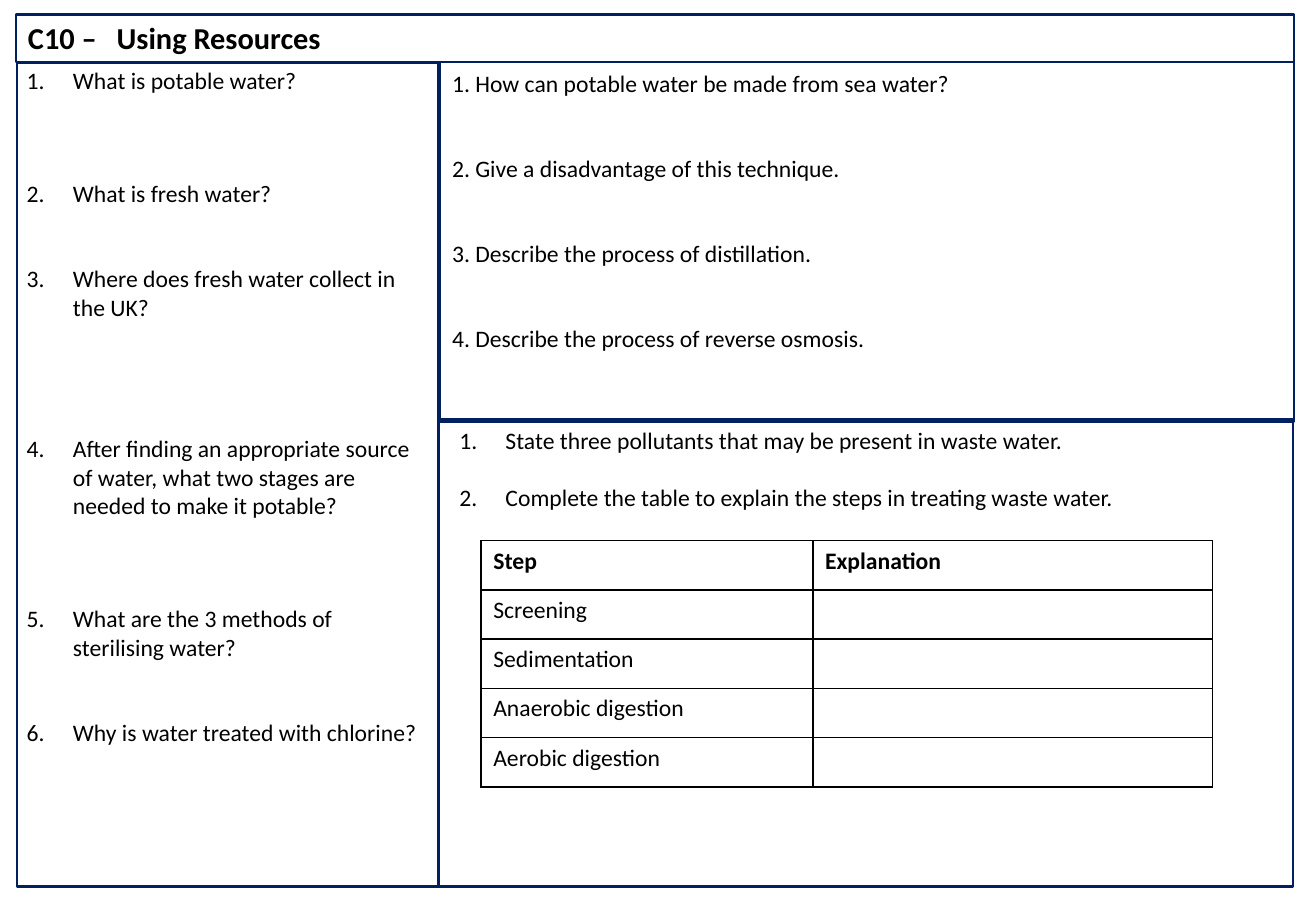
from dataclasses import dataclass

import pptx
import pptx.dml.color
import pptx.enum.shapes
import pptx.enum.text
import pptx.oxml
import pptx.oxml.ns
import pptx.util
from pptx.presentation import Presentation as Deck
from pptx.shapes.base import BaseShape
from pptx.slide import Slide
from pptx.table import Table
from pptx.text.text import _Paragraph as Paragraph

PX_PER_INCH = 100
COMPARISON_LAYOUT = 4


def emu(px: int) -> int:
    return px * pptx.util.Inches(1) // PX_PER_INCH


@dataclass(frozen=True)
class Theme:
    font: str = "Calibri"
    text: str = "000000"
    frame: str = "002060"
    title_size: int = 18
    body_size: int = 14
    line_pitch: float = 16.8
    frame_width: float = 1.5
    grid_width: float = 1


@dataclass(frozen=True)
class Area:
    left: int
    top: int
    width: int
    height: int

    def in_emu(self) -> tuple[int, ...]:
        return tuple(map(emu, (self.left, self.top, self.width, self.height)))


@dataclass(frozen=True)
class Question:
    text: str
    answer_lines: int = 0


@dataclass(frozen=True)
class QuestionList:
    area: Area
    questions: tuple[Question, ...]
    auto_numbered: bool = True


THEME = Theme()
TITLE = "C10 –\tUsing Resources"
TITLE_AREA = Area(13, 11, 671, 40)
TITLE_TAB = 73
HANGING_INDENT = 38

FRAMES = (
    Area(13, 12, 1052, 39),
    Area(14, 52, 347, 678),
    Area(362, 51, 703, 296),
    Area(361, 345, 703, 385),
)

QUESTION_LISTS = (
    QuestionList(Area(12, 49, 348, 599), (
        Question("What is potable water?", 3),
        Question("What is fresh water?", 2),
        Question("Where does fresh water collect in the UK?", 4),
        Question("After finding an appropriate source of water, "
                 "what two stages are needed to make it potable?", 3),
        Question("What are the 3 methods of sterilising water?", 2),
        Question("Why is water treated with chlorine?"),
    )),
    QuestionList(Area(362, 52, 691, 246), (
        Question("1. How can potable water be made from sea water?", 2),
        Question("2. Give a disadvantage of this technique.", 2),
        Question("3. Describe the process of distillation.", 2),
        Question("4. Describe the process of reverse osmosis."),
    ), auto_numbered=False),
    QuestionList(Area(368, 346, 691, 175), (
        Question("State three pollutants that may be present in waste water.", 1),
        Question("Complete the table to explain the steps in treating waste water."),
    )),
)

TABLE_AREA = Area(396, 445, 602, 203)
COLUMN_WIDTHS = (273, 329)
TABLE_HEADINGS = ("Step", "Explanation")
STEPS = ("Screening", "Sedimentation", "Anaerobic digestion", "Aerobic digestion")


def color(value: str) -> pptx.dml.color.RGBColor:
    return pptx.dml.color.RGBColor.from_string(value)


def append_xml(parent, xml: str) -> None:
    tag_end = min(i for i in (xml.find(" "), xml.find(">"), xml.find("/")) if i > 0)
    declared = f"{xml[:tag_end]} {pptx.oxml.ns.nsdecls('a')}{xml[tag_end:]}"
    parent.append(pptx.oxml.parse_xml(declared))


def style(para: Paragraph, size: int, bold: bool = False) -> None:
    para.alignment = pptx.enum.text.PP_ALIGN.LEFT
    para.font.name = THEME.font
    para.font.size = pptx.util.Pt(size)
    para.font.bold = bold
    para.font.color.rgb = color(THEME.text)


def place(box: BaseShape, area: Area) -> None:
    box.left, box.top, box.width, box.height = area.in_emu()
    frame = box.text_frame
    frame.word_wrap = True
    frame.auto_size = pptx.enum.text.MSO_AUTO_SIZE.NONE
    frame.vertical_anchor = pptx.enum.text.MSO_ANCHOR.TOP


def write_title(box: BaseShape) -> None:
    place(box, TITLE_AREA)
    para = box.text_frame.paragraphs[0]
    para.text = TITLE
    append_xml(para._p.get_or_add_pPr(),
               f'<a:tabLst><a:tab pos="{emu(TITLE_TAB)}" algn="l"/></a:tabLst>')
    style(para, THEME.title_size, bold=True)


def set_numbering(para: Paragraph, auto_numbered: bool) -> None:
    properties = para._p.get_or_add_pPr()
    indent = emu(HANGING_INDENT) if auto_numbered else 0
    properties.set("marL", str(indent))
    properties.set("indent", str(-indent))
    if auto_numbered:
        append_xml(properties, f'<a:buFont typeface="{THEME.font}"/>')
        append_xml(properties, '<a:buAutoNum type="arabicPeriod"/>')
    else:
        append_xml(properties, "<a:buNone/>")


def write_questions(box: BaseShape, question_list: QuestionList) -> None:
    place(box, question_list.area)
    frame = box.text_frame
    gap = 0
    for index, question in enumerate(question_list.questions):
        para = frame.add_paragraph() if index else frame.paragraphs[0]
        para.text = question.text
        set_numbering(para, question_list.auto_numbered)
        para.space_before = pptx.util.Pt(gap * THEME.line_pitch)
        para.space_after = pptx.util.Pt(0)
        style(para, THEME.body_size)
        gap = question.answer_lines


def draw_frame(page: Slide, area: Area) -> None:
    frame = page.shapes.add_shape(
        pptx.enum.shapes.MSO_SHAPE.RECTANGLE, *area.in_emu())
    frame.shadow.inherit = False
    frame.fill.background()
    frame.line.color.rgb = color(THEME.frame)
    frame.line.width = pptx.util.Pt(THEME.frame_width)


def fill_cell(table: Table, row: int, column: int, text: str) -> None:
    cell = table.cell(row, column)
    cell.text = text
    style(cell.text_frame.paragraphs[0], THEME.body_size, bold=row == 0)
    properties = cell._tc.get_or_add_tcPr()
    for side in ("lnL", "lnR", "lnT", "lnB"):
        append_xml(properties,
                   f'<a:{side} w="{pptx.util.Pt(THEME.grid_width)}"><a:solidFill>'
                   f'<a:srgbClr val="{THEME.text}"/></a:solidFill></a:{side}>')
    cell.fill.background()


def draw_table(page: Slide) -> None:
    rows = (TABLE_HEADINGS, *((step, "") for step in STEPS))
    table = page.shapes.add_table(
        len(rows), len(COLUMN_WIDTHS), *TABLE_AREA.in_emu()).table
    table.first_row = table.horz_banding = False
    for column, width in zip(table.columns, COLUMN_WIDTHS):
        column.width = emu(width)
    for row_index, texts in enumerate(rows):
        table.rows[row_index].height = emu(TABLE_AREA.height) // len(rows)
        for column_index, text in enumerate(texts):
            fill_cell(table, row_index, column_index, text)


def main() -> None:
    deck: Deck = pptx.Presentation()
    deck.slide_width, deck.slide_height = emu(1083), emu(750)
    page = deck.slides.add_slide(deck.slide_layouts[COMPARISON_LAYOUT])
    title, *bodies = page.placeholders
    write_title(title)
    for body, question_list in zip(bodies, QUESTION_LISTS):
        write_questions(body, question_list)
    for unused in bodies[len(QUESTION_LISTS):]:
        unused.element.getparent().remove(unused.element)
    for area in FRAMES:
        draw_frame(page, area)
    draw_table(page)
    deck.save("out.pptx")


if __name__ == "__main__":
    main()
